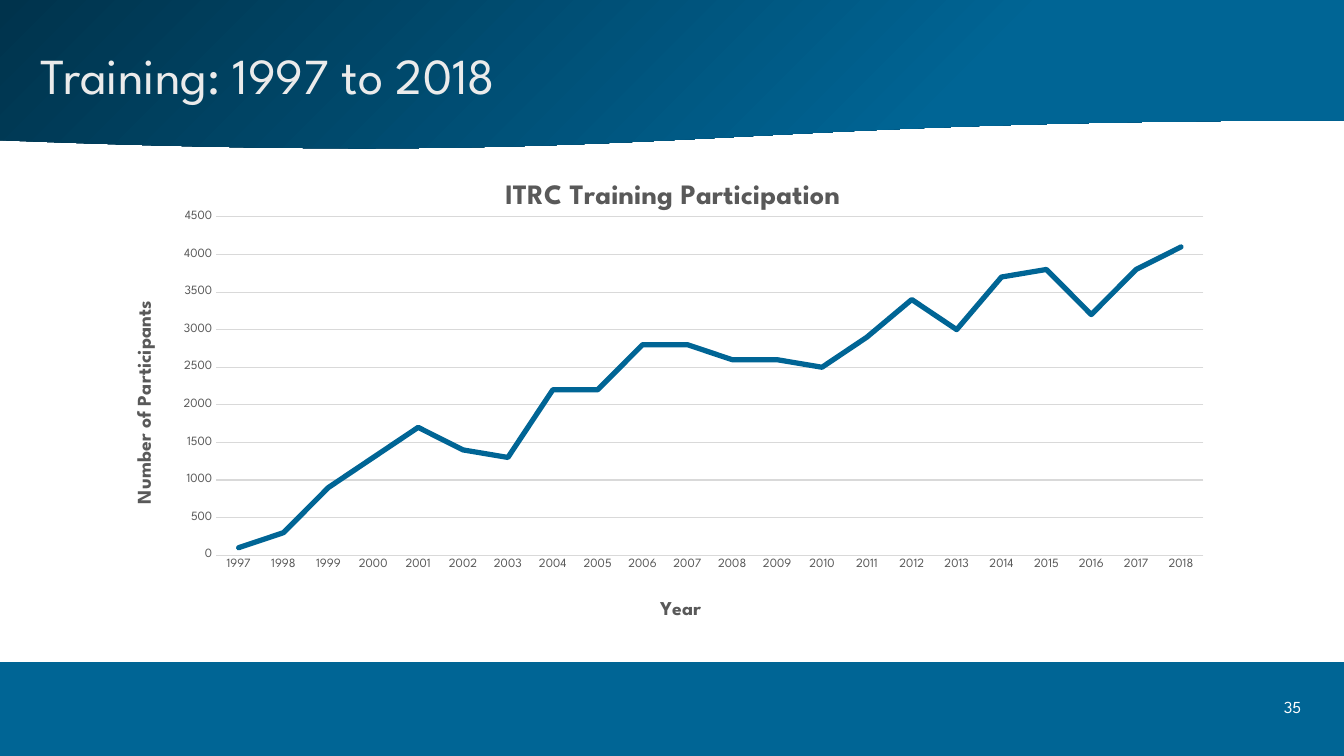
"""Builds a slide with a line chart of training participation by year."""
from lxml import etree
from pptx import Presentation
from pptx.chart.data import CategoryChartData
from pptx.dml.color import RGBColor
from pptx.enum.chart import XL_CHART_TYPE, XL_TICK_MARK
from pptx.enum.shapes import MSO_SHAPE
from pptx.enum.text import MSO_ANCHOR, PP_ALIGN
from pptx.oxml import parse_xml
from pptx.oxml.ns import nsdecls, qn
from pptx.util import Inches, Pt

LINE = XL_CHART_TYPE.LINE
NO_TICK = XL_TICK_MARK.NONE
WAVE, RECT = MSO_SHAPE.FLOWCHART_DOCUMENT, MSO_SHAPE.RECTANGLE
MIDDLE, TOP = MSO_ANCHOR.MIDDLE, MSO_ANCHOR.TOP
LEFT, CENTER = PP_ALIGN.LEFT, PP_ALIGN.CENTER

HEADING = "Training: 1997 to 2018"
PAGE = "35"
CHART_TITLE = "ITRC Training Participation"
YEAR_TITLE = "Year"
COUNT_TITLE = "Number of Participants"
FIRST_YEAR = 1997
PARTICIPANTS = [100, 300, 900, 1300, 1700, 1400, 1300, 2200, 2200, 2800, 2800,
                2600, 2600, 2500, 2900, 3400, 3000, 3700, 3800, 3200, 3800, 4100]

THEME = {
    "font": "League Spartan",
    "navy": "00334C", "blue": "006595", "white": "FFFFFF", "pale": "EBEBEB",
    "gray": "595959", "rule": "D9D9D9", "black": "000000",
    "heading": 36, "chart_title": 20, "axis_title": 14, "page": 12,
    "chart": 10, "label": 9, "series": 3.75, "hairline": 0.75,
}
WIDTH, HEIGHT = 13.33, 7.5
FOOTER_TOP = 6.57


def color(name):
    return RGBColor.from_string(THEME[name])


def set_font(font, size, tint, bold=False):
    font.name, font.size, font.bold = THEME["font"], Pt(THEME[size]), bold
    font.color.rgb = color(tint)


def add_text(slide, text, box, *, size, tint, align=LEFT, anchor=TOP):
    frame = slide.shapes.add_textbox(*map(Inches, box)).text_frame
    frame.word_wrap = True
    frame.vertical_anchor = anchor
    paragraph = frame.paragraphs[0]
    paragraph.alignment = align
    run = paragraph.add_run()
    run.text = text
    set_font(run.font, size, tint)


def add_band(slide, outline, top, height):
    band = slide.shapes.add_shape(outline, 0, Inches(top), Inches(WIDTH), Inches(height))
    band.shadow.inherit = False
    band.line.fill.background()
    return band.fill


def place(element, index, **position):
    """Gives a chart part a fixed place, as fractions of the chart."""
    for old in element.findall(qn("c:layout")):
        element.remove(old)
    layout = parse_xml(f"<c:layout {nsdecls('c')}><c:manualLayout/></c:layout>")
    for tag, value in position.items():
        etree.SubElement(layout[0], qn(f"c:{tag}")).set("val", str(value))
    element.insert(index, layout)


def set_title(title, text, size, x, y, turn=0):
    run = title.text_frame.paragraphs[0].add_run()
    run.text = text
    set_font(run.font, size, "gray", bold=True)
    for body in title.element.iter(qn("a:bodyPr")):
        body.set("rot", str(turn * 60000))
        body.set("vert", "horz")
    place(title.element, 1, xMode="edge", yMode="edge", x=x, y=y)


def style_axis(axis):
    axis.major_tick_mark = axis.minor_tick_mark = NO_TICK
    set_font(axis.tick_labels.font, "label", "gray")


def set_line(line, tint, width):
    line.color.rgb = color(tint)
    line.width = Pt(THEME[width])


def add_participation(slide):
    data = CategoryChartData()
    data.categories = [str(FIRST_YEAR + i) for i in range(len(PARTICIPANTS))]
    data.add_series("Series 1", PARTICIPANTS)
    box = map(Inches, (1.08, 1.51, 11.09, 4.79))
    chart = slide.shapes.add_chart(LINE, *box, data).chart
    set_font(chart.font, "chart", "black")
    chart.has_legend = False
    set_title(chart.chart_title, CHART_TITLE, "chart_title", 0.35, 0.05)

    years, counts = chart.category_axis, chart.value_axis
    for axis in (years, counts):
        style_axis(axis)
    set_title(years.axis_title, YEAR_TITLE, "axis_title", 0.49, 0.92)
    set_title(counts.axis_title, COUNT_TITLE, "axis_title", 0.02, 0.3, turn=-90)
    set_line(years.format.line, "rule", "hairline")
    counts.minimum_scale, counts.maximum_scale, counts.major_unit = 0, 4500, 500
    counts.format.line.fill.background()
    set_line(counts.major_gridlines.format.line, "rule", "hairline")

    plot = chart.plots[0]
    plot.vary_by_categories = False
    trend = plot.series[0]
    trend.smooth = False
    set_line(trend.format.line, "blue", "series")
    for series in chart.element.iter(qn("c:ser")):
        series.find(qn("c:spPr")).find(qn("a:ln")).set("cap", "rnd")
    for area in chart.element.iter(qn("c:plotArea")):
        place(area, 0, layoutTarget="inner", xMode="edge", yMode="edge",
              x=0.096, y=0.134, w=0.883, h=0.701)


def main():
    deck = Presentation()
    deck.slide_width, deck.slide_height = Inches(WIDTH), Inches(HEIGHT)
    slide = deck.slides.add_slide(deck.slide_layouts[6])

    header = add_band(slide, WAVE, 0, 1.49)
    header.gradient()
    header.gradient_angle = 315
    for stop, (tint, position) in zip(header.gradient_stops, (("navy", 0), ("blue", 0.71))):
        stop.color.rgb = color(tint)
        stop.position = position
    footer = add_band(slide, RECT, FOOTER_TOP, HEIGHT - FOOTER_TOP)
    footer.solid()
    footer.fore_color.rgb = color("blue")

    add_text(slide, HEADING, (0.3, 0.35, 9.58, 0.77), size="heading", tint="pale", anchor=MIDDLE)
    add_text(slide, PAGE, (12.56, 6.86, 0.52, 0.44), size="page", tint="white", align=CENTER)
    add_participation(slide)
    deck.save("out.pptx")


if __name__ == "__main__":
    main()
